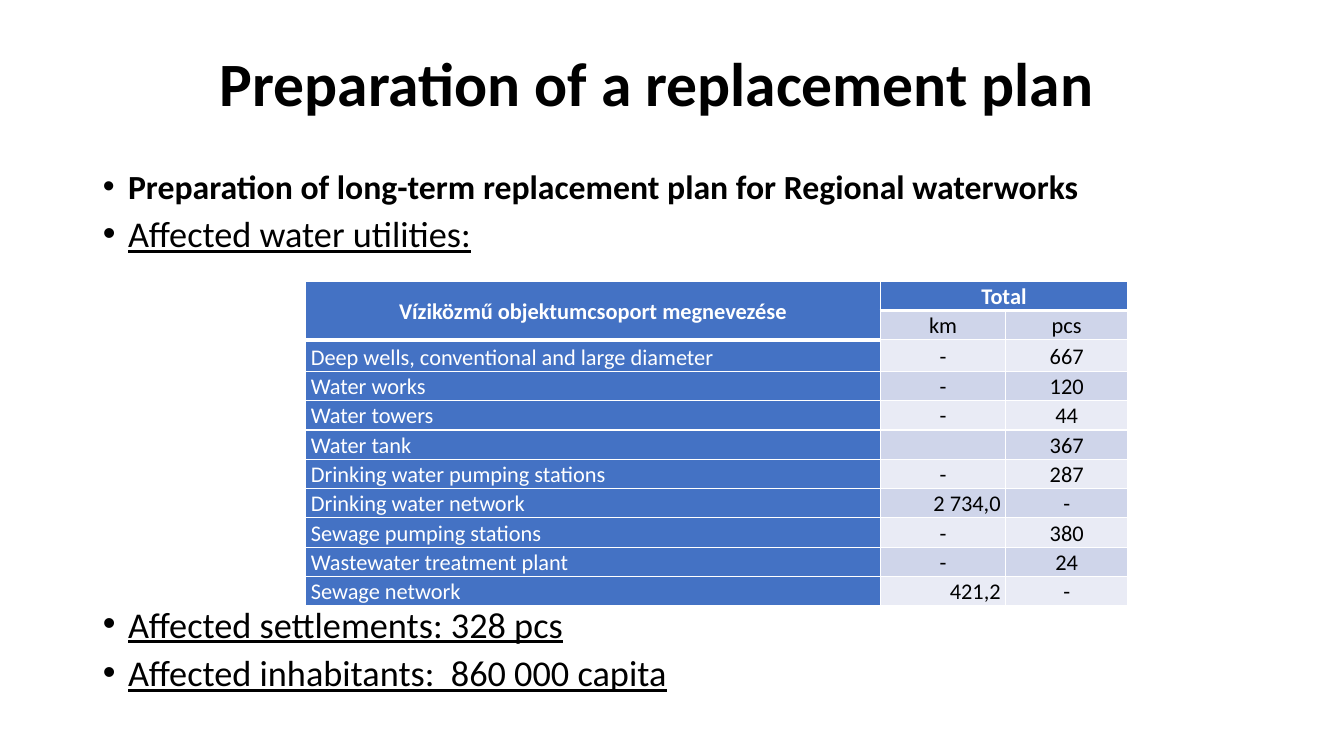
from lxml import etree
from pptx import Presentation
from pptx.dml.color import RGBColor
from pptx.enum.text import MSO_ANCHOR, MSO_AUTO_SIZE, PP_ALIGN
from pptx.oxml.ns import qn
from pptx.util import Pt

LEFT, CENTER, RIGHT = PP_ALIGN.LEFT, PP_ALIGN.CENTER, PP_ALIGN.RIGHT
MIDDLE, BOTTOM = MSO_ANCHOR.MIDDLE, MSO_ANCHOR.BOTTOM
NO_AUTOFIT = MSO_AUTO_SIZE.NONE

FONT = "Calibri"
BLACK, WHITE, BLUE = "000000", "FFFFFF", "4472C4"
BANDS = ("E9EBF5", "CFD5EA")

TITLE = "Preparation of a replacement plan"
TABLE_GAP = 254
# text, size, bold, underline, space before
BULLETS = [
    ("Preparation of long-term replacement plan for Regional waterworks", 24.1, True, False, 10),
    ("Affected water utilities:", 25.9, False, True, 10),
    ("Affected settlements: 328 pcs", 25.9, False, True, TABLE_GAP),
    ("Affected inhabitants:  860 000 capita", 25.9, False, True, 10),
]
UTILITIES = [
    ("Víziközmű objektumcsoport megnevezése", "Total", ""),
    ("", "km", "pcs"),
    ("Deep wells, conventional and large diameter", "-", "667"),
    ("Water works", "-", "120"),
    ("Water towers", "-", "44"),
    ("Water tank", "", "367"),
    ("Drinking water pumping stations", "-", "287"),
    ("Drinking water network", "2 734,0", "-"),
    ("Sewage pumping stations", "-", "380"),
    ("Wastewater treatment plant", "-", "24"),
    ("Sewage network", "421,2", "-"),
]
COLUMN_WIDTHS = (410.4, 89.6, 87.1)
ROW_HEIGHT, FIRST_UTILITY_HEIGHT = 20.9, 22.4
FIRST_UTILITY = 2


def rgb(color):
    return RGBColor.from_string(color)


def place(part, left, top, width, height):
    part.left, part.top, part.width, part.height = map(Pt, (left, top, width, height))


def format_paragraph(paragraph, size, color, bold, align, line_spacing):
    paragraph.alignment = align
    paragraph.line_spacing = line_spacing
    font = paragraph.font
    font.name, font.size, font.bold = FONT, Pt(size), bold
    font.color.rgb = rgb(color)


def set_borders(cell, bottom_width):
    """Draw white borders; they must come before the fill in the cell XML."""
    properties = cell._tc.get_or_add_tcPr()
    widths = {"a:lnL": 1, "a:lnR": 1, "a:lnT": 1, "a:lnB": bottom_width}
    for position, (tag, width) in enumerate(widths.items()):
        line = etree.Element(qn(tag), w=str(Pt(width)))
        fill = etree.SubElement(line, qn("a:solidFill"))
        etree.SubElement(fill, qn("a:srgbClr"), val=WHITE)
        properties.insert(position, line)


def add_title(slide):
    title = slide.shapes.title
    place(title, 33.84, 9.36, 871.2, 104.4)
    frame = title.text_frame
    frame.text = TITLE
    frame.auto_size = NO_AUTOFIT
    frame.vertical_anchor = MIDDLE
    format_paragraph(frame.paragraphs[0], 44, BLACK, True, CENTER, 0.9)


def add_bullets(slide):
    body = slide.placeholders[1]
    place(body, 66.24, 120.24, 828, 390.96)
    frame = body.text_frame
    frame.text = "\n".join(bullet[0] for bullet in BULLETS)
    frame.auto_size = NO_AUTOFIT
    for paragraph, (_, size, bold, underline, gap) in zip(frame.paragraphs, BULLETS):
        format_paragraph(paragraph, size, BLACK, bold, LEFT, 0.8)
        paragraph.font.underline = underline
        paragraph.space_before = Pt(gap)
        properties = paragraph._p.get_or_add_pPr()
        properties.set("marL", str(Pt(18)))
        properties.set("indent", str(Pt(-18)))


def add_utilities(slide):
    heights = [ROW_HEIGHT] * len(UTILITIES)
    heights[FIRST_UTILITY] = FIRST_UTILITY_HEIGHT
    table = slide.shapes.add_table(
        len(UTILITIES), len(COLUMN_WIDTHS), Pt(218.4), Pt(200.9),
        Pt(sum(COLUMN_WIDTHS)), Pt(sum(heights))).table
    table.horz_banding = False
    for column, width in zip(table.columns, COLUMN_WIDTHS):
        column.width = Pt(width)
    for row, height in zip(table.rows, heights):
        row.height = Pt(height)

    for r, values in enumerate(UTILITIES):
        for c, value in enumerate(values):
            cell = table.cell(r, c)
            cell.text = value
            is_header = r == 0
            is_name = c == 0 and r >= FIRST_UTILITY
            is_blue = is_header or c == 0
            align = LEFT if is_name else RIGHT if "," in value else CENTER
            format_paragraph(cell.text_frame.paragraphs[0], 16,
                             WHITE if is_blue else BLACK, is_header, align, 1.07)
            cell.vertical_anchor = BOTTOM if is_name else MIDDLE
            cell.margin_left = cell.margin_right = Pt(3.6)
            cell.margin_top = cell.margin_bottom = 0
            cell.fill.solid()
            cell.fill.fore_color.rgb = rgb(BLUE if is_blue else BANDS[r % 2])
            under_header = is_header or (r, c) == (1, 0)
            set_borders(cell, 3 if under_header else 1)

    table.cell(0, 0).merge(table.cell(1, 0))
    table.cell(0, 1).merge(table.cell(0, 2))


def main():
    presentation = Presentation()
    presentation.slide_width, presentation.slide_height = Pt(960), Pt(540)
    slide = presentation.slides.add_slide(presentation.slide_layouts[1])
    add_title(slide)
    add_bullets(slide)
    add_utilities(slide)
    presentation.save("out.pptx")


if __name__ == "__main__":
    main()
